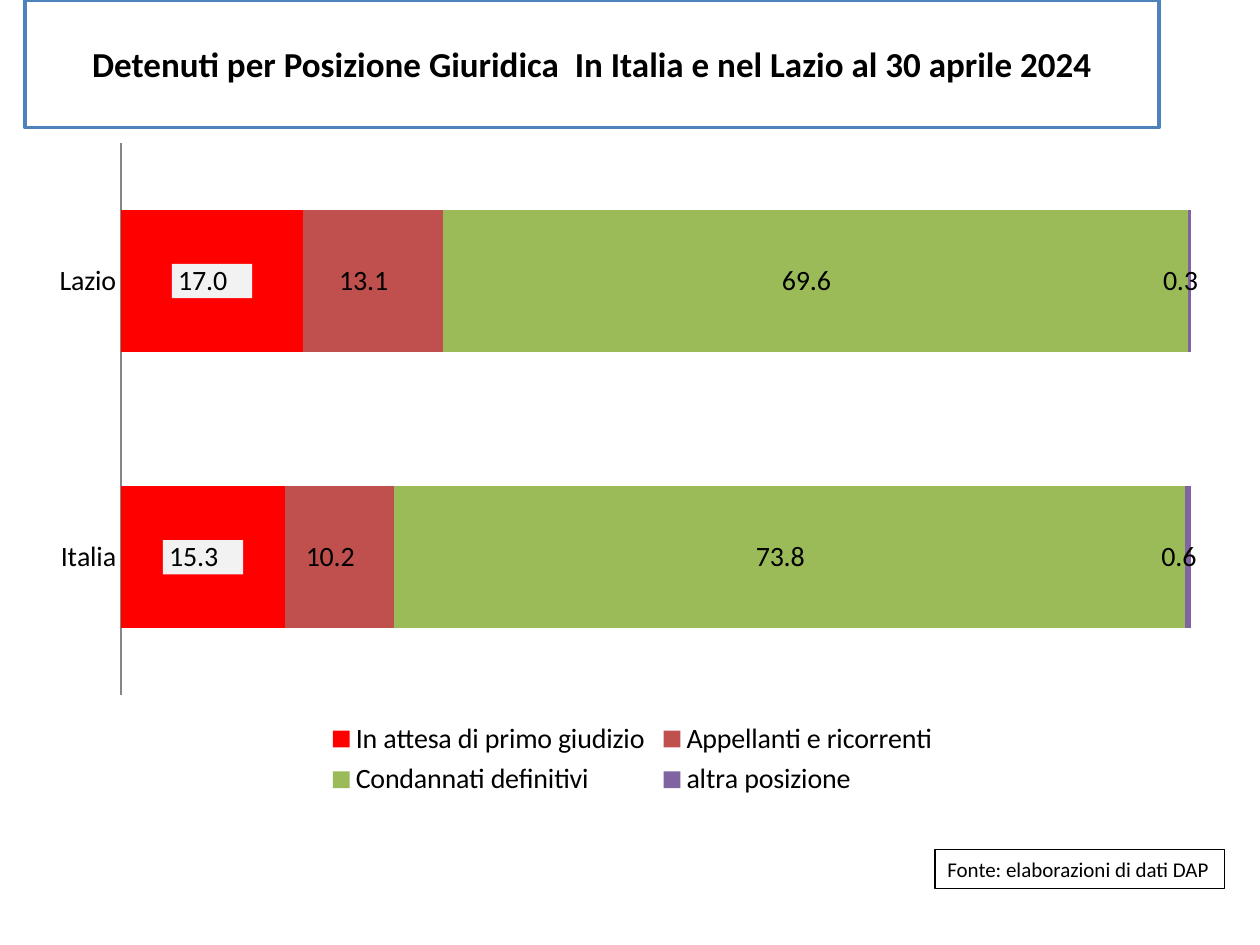
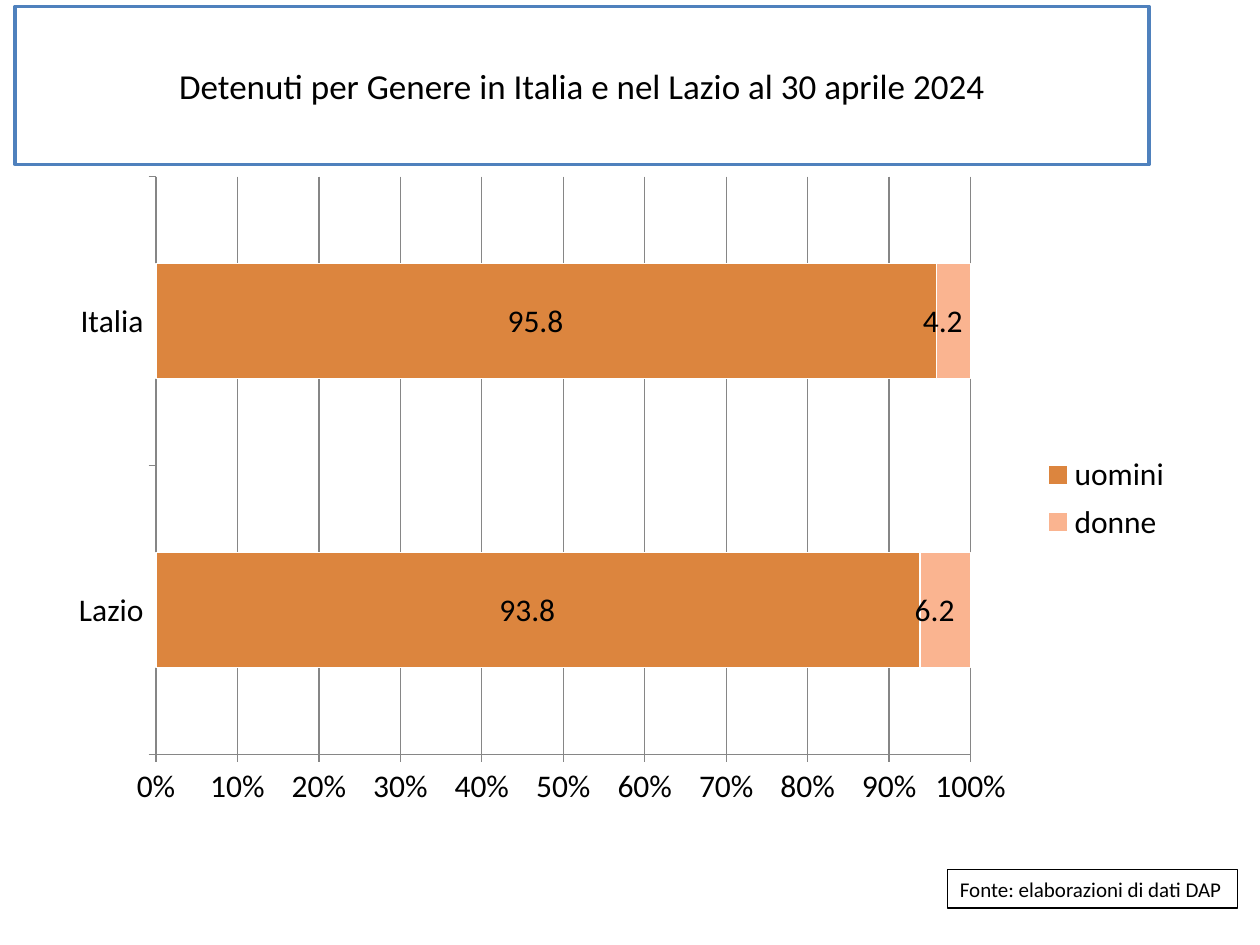
from pptx import Presentation
from pptx.chart.data import CategoryChartData
from pptx.dml.color import RGBColor
from pptx.enum.chart import XL_CHART_TYPE, XL_LABEL_POSITION, XL_LEGEND_POSITION, XL_TICK_MARK
from pptx.enum.shapes import MSO_SHAPE
from pptx.enum.text import MSO_ANCHOR, PP_ALIGN
from pptx.oxml import parse_xml
from pptx.oxml.ns import nsdecls
from pptx.util import Inches, Pt

STACKED = XL_CHART_TYPE.BAR_STACKED_100
LABEL_CENTER = XL_LABEL_POSITION.CENTER
LEGEND_BOTTOM, LEGEND_RIGHT = XL_LEGEND_POSITION.BOTTOM, XL_LEGEND_POSITION.RIGHT
TICK_NONE, TICK_OUT = XL_TICK_MARK.NONE, XL_TICK_MARK.OUTSIDE
RECTANGLE = MSO_SHAPE.RECTANGLE
MIDDLE, CENTER, LEFT = MSO_ANCHOR.MIDDLE, PP_ALIGN.CENTER, PP_ALIGN.LEFT

BLACK = RGBColor(0, 0, 0)
WHITE = RGBColor(255, 255, 255)
FRAME_BLUE = RGBColor(0x4F, 0x81, 0xBD)
AXIS_GRAY = RGBColor(0x86, 0x86, 0x86)
LABEL_GRAY = RGBColor(0xF2, 0xF2, 0xF2)
RED = RGBColor(0xFF, 0, 0)
BRICK = RGBColor(0xC0, 0x50, 0x4D)
GREEN = RGBColor(0x9B, 0xBB, 0x59)
PURPLE = RGBColor(0x80, 0x64, 0xA2)
ORANGE = RGBColor(0xDC, 0x85, 0x3E)
PEACH = RGBColor(0xFA, 0xB4, 0x90)

FONT = "Calibri"
VALUE_FORMAT = r"_-* #,##0.0\ _€_-;\-* #,##0.0\ _€_-"
SOURCE = "Fonte: elaborazioni di dati DAP"


def layout_xml(left, top, width, height, inner=False):
    """Return a manual chart layout given as shares of the chart."""
    target = '<c:layoutTarget val="inner"/>' if inner else ""
    return parse_xml(
        f'<c:layout {nsdecls("c")}><c:manualLayout>{target}'
        '<c:xMode val="edge"/><c:yMode val="edge"/>'
        f'<c:x val="{left}"/><c:y val="{top}"/><c:w val="{width}"/><c:h val="{height}"/>'
        "</c:manualLayout></c:layout>")


class DeckBuilder:
    """Hold the deck style and the current page; places are percentages of the page."""

    def __init__(self):
        self.deck = Presentation()
        self.deck.slide_width, self.deck.slide_height = Inches(10), Inches(7.5)
        self.page = None

    def place(self, left, top, width, height):
        """Turn percentages of the page into lengths."""
        across, down = self.deck.slide_width / 100, self.deck.slide_height / 100
        return int(left * across), int(top * down), int(width * across), int(height * down)

    def framed_text(self, box, text, size, align, color, weight, bold=False):
        """Write one paragraph in a white box with a coloured frame."""
        box.fill.solid()
        box.fill.fore_color.rgb = WHITE
        box.line.color.rgb = color
        box.line.width = Pt(weight)
        box.text_frame.vertical_anchor = MIDDLE
        para = box.text_frame.paragraphs[0]
        para.text = text
        para.alignment = align
        self.style_font(para.font, size, bold)

    def style_font(self, font, size, bold=False):
        """Apply the deck font."""
        font.name, font.size, font.bold = FONT, Pt(size), bold
        font.color.rgb = BLACK

    def add_page(self, title, area, bold=False):
        """Start a page with a framed title."""
        self.page = self.deck.slides.add_slide(self.deck.slide_layouts[5])
        box = self.page.shapes.title
        box.left, box.top, box.width, box.height = self.place(*area)
        self.framed_text(box, title, 20, CENTER, FRAME_BLUE, 2, bold)

    def add_source(self, left, top):
        """Add the source note."""
        box = self.page.shapes.add_shape(RECTANGLE, *self.place(left, top, 23, 4.1))
        box.shadow.inherit = False
        box.text_frame.word_wrap = False
        self.framed_text(box, SOURCE, 12, LEFT, BLACK, 0.75)

    def add_chart(self, area, categories, series, size, gap, plot_area, legend_place, legend_area):
        """Add a stacked bar chart from (name, values, colour) rows."""
        data = CategoryChartData(number_format=VALUE_FORMAT)
        data.categories = categories
        for name, values, _ in series:
            data.add_series(name, values)
        chart = self.page.shapes.add_chart(STACKED, *self.place(*area), data).chart
        chart.has_title = False
        self.style_font(chart.font, size)
        plot = chart.plots[0]
        plot.gap_width, plot.overlap, plot.vary_by_categories = gap, 100, False
        for bars, (_, _, color) in zip(plot.series, series):
            bars.format.fill.solid()
            bars.format.fill.fore_color.rgb = color
            labels = bars.data_labels
            labels.show_value = True
            labels.position = LABEL_CENTER
            labels.number_format, labels.number_format_is_linked = VALUE_FORMAT, False
            self.style_font(labels.font, size)
        for axis in (chart.category_axis, chart.value_axis):
            axis.format.line.color.rgb = AXIS_GRAY
            axis.minor_tick_mark = TICK_NONE
        chart.has_legend = True
        chart.legend.position = legend_place
        chart.legend.include_in_layout = False
        self.style_font(chart.legend.font, size)
        self.arrange(chart, plot_area, legend_area)
        return chart

    def arrange(self, chart, plot_area, legend_area):
        """Fix the places of the plot and the legend."""
        space = chart._chartSpace
        for old in space.xpath("c:chart/c:plotArea/c:layout | c:chart/c:legend/c:layout"):
            old.getparent().remove(old)
        space.xpath("c:chart/c:plotArea")[0].insert(0, layout_xml(*plot_area, inner=True))
        space.xpath("c:chart/c:legend/c:overlay")[0].addprevious(layout_xml(*legend_area))

    def fill_labels(self, bars, color):
        """Put a coloured background behind the labels of a series."""
        text = bars.data_labels._element.xpath("c:txPr")[0]
        text.addprevious(parse_xml(
            f'<c:spPr {nsdecls("c", "a")}><a:solidFill><a:srgbClr val="{color}"/>'
            "</a:solidFill></c:spPr>"))


def add_legal_status(builder):
    """Build the page on legal status."""
    builder.add_page("Detenuti per Posizione Giuridica  In Italia e nel Lazio al 30 aprile 2024",
                     (2, 0, 90, 13.5), bold=True)
    builder.add_source(74.2, 89.9)
    chart = builder.add_chart(
        (3, 13.7, 94.4, 71.3), ["Lazio", "Italia"],
        [("In attesa di primo giudizio", (17, 15.3), RED),
         ("Appellanti e ricorrenti", (13.1, 10.2), BRICK),
         ("Condannati definitivi", (69.6, 73.8), GREEN),
         ("altra posizione", (0.3, 0.6), PURPLE)],
        16, 95, (0.07, 0.02, 0.9, 0.82), LEGEND_BOTTOM, (0.24, 0.87, 0.52, 0.13))
    chart.category_axis.reverse_order = True
    chart.category_axis.major_tick_mark = TICK_NONE
    chart.value_axis.has_major_gridlines = False
    chart.value_axis.visible = False
    builder.fill_labels(chart.plots[0].series[0], LABEL_GRAY)


def add_gender(builder):
    """Build the page on gender."""
    builder.add_page("Detenuti per Genere in Italia e nel Lazio al 30 aprile 2024",
                     (1.2, 0.7, 90, 16.7))
    builder.add_source(75.2, 92)
    chart = builder.add_chart(
        (4.3, 17.3, 89.8, 69.5), ["Lazio", "Italia"],
        [("uomini", (93.8, 95.8), ORANGE), ("donne", (6.2, 4.2), PEACH)],
        18, 150, (0.09, 0.02, 0.72, 0.88), LEGEND_RIGHT, (0.86, 0.43, 0.14, 0.16))
    chart.category_axis.major_tick_mark = TICK_OUT
    axis = chart.value_axis
    axis.minimum_scale, axis.major_tick_mark = 0, TICK_OUT
    axis.has_major_gridlines = True
    axis.major_gridlines.format.line.color.rgb = AXIS_GRAY
    axis.tick_labels.number_format, axis.tick_labels.number_format_is_linked = "0%", False
    for bars in chart.plots[0].series:
        bars.format.line.color.rgb = WHITE
        bars.format.line.width = Pt(0.75)


def main():
    """Build and save the deck."""
    builder = DeckBuilder()
    add_legal_status(builder)
    add_gender(builder)
    builder.deck.save("out.pptx")


if __name__ == "__main__":
    main()
